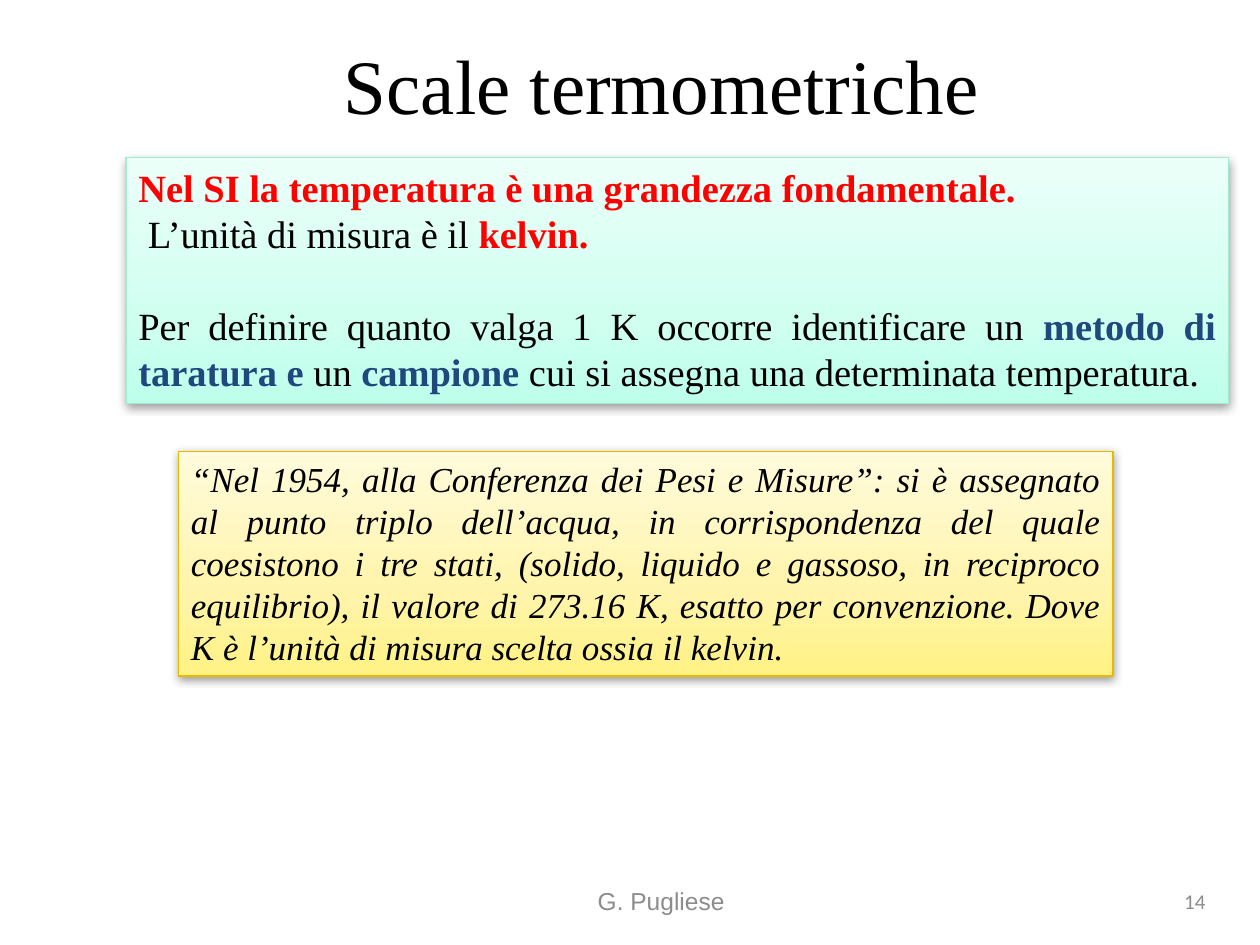
"""Build the slide on temperature scales and the kelvin."""
import copy

import lxml.etree
import pptx
import pptx.dml.color
import pptx.enum.shapes
import pptx.enum.text
import pptx.oxml.ns
import pptx.util
from pptx.util import Cm

ALIGN = pptx.enum.text.PP_ALIGN
ANCHOR = pptx.enum.text.MSO_ANCHOR
COLORS = {
    "text": "000000", "key": "FF0000", "term": "1F497D", "footer": "8C8C8C",
    "mint_line": "A4EBCD", "gold_line": "E7BA00",
}
GRADIENTS = {
    "mint": ("BDFFEB", "D0FFF0", "EBFFF9"),
    "gold": ("FFF284", "FFF4A9", "FFFBDC"),
}
STOPS = (0, 0.35, 1)


def rgb(value):
    """Return the colour for a hex string."""
    return pptx.dml.color.RGBColor.from_string(value)


class Deck:
    """Hold the style and the current slide."""

    serif = "Times New Roman"

    def __init__(self):
        """Start a presentation with one title-only slide."""
        self.prs = pptx.Presentation()
        self.prs.slide_width, self.prs.slide_height = Cm(25.4), Cm(19.05)
        self.s = self.prs.slides.add_slide(self.prs.slide_layouts[5])

    def style(self, r, size, color="text", font=serif, bold=False, italic=False):
        """Format one run."""
        r.font.size, r.font.name = pptx.util.Pt(size), font
        r.font.bold, r.font.italic = bold, italic
        r.font.color.rgb = rgb(COLORS[color])

    def title(self, text, x, y, w, h):
        """Fill and place the title placeholder."""
        sp = self.s.shapes.title
        sp.left, sp.top, sp.width, sp.height = Cm(x), Cm(y), Cm(w), Cm(h)
        sp.text_frame.text = text
        sp.text_frame.vertical_anchor = ANCHOR.MIDDLE
        p = sp.text_frame.paragraphs[0]
        p.alignment = ALIGN.CENTER
        self.style(p.runs[0], 44)

    def label(self, text, x, w, size, font, align):
        """Add a footer label."""
        sp = self.s.shapes.add_textbox(Cm(x), Cm(17.66), Cm(w), Cm(1.01))
        tf = sp.text_frame
        tf.word_wrap, tf.vertical_anchor = True, ANCHOR.MIDDLE
        tf.text = text
        tf.paragraphs[0].alignment = align
        self.style(tf.paragraphs[0].runs[0], size, "footer", font)

    def shadow(self, sp):
        """Give a shape a soft shadow below it."""
        sp.shadow.inherit = False
        effects = sp._element.spPr.find(pptx.oxml.ns.qn("a:effectLst"))
        outer = lxml.etree.SubElement(
            effects, pptx.oxml.ns.qn("a:outerShdw"), blurRad="63500",
            dist="20320", dir="5400000", rotWithShape="0")
        clr = lxml.etree.SubElement(outer, pptx.oxml.ns.qn("a:srgbClr"), val="000000")
        lxml.etree.SubElement(clr, pptx.oxml.ns.qn("a:alpha"), val="38000")

    def panel(self, look, x, y, w, h, paragraphs, size, italic=False):
        """Add a gradient panel; each paragraph is a list of (text, colour, bold)."""
        sp = self.s.shapes.add_shape(
            pptx.enum.shapes.MSO_SHAPE.RECTANGLE, Cm(x), Cm(y), Cm(w), Cm(h))
        sp.fill.gradient()
        sp.fill.gradient_angle = 90
        first = sp._element.spPr.findall(".//" + pptx.oxml.ns.qn("a:gs"))[0]
        first.addnext(copy.deepcopy(first))
        for stop, position, color in zip(sp.fill.gradient_stops, STOPS, GRADIENTS[look]):
            stop.position, stop.color.rgb = position, rgb(color)
        sp.line.color.rgb = rgb(COLORS[look + "_line"])
        sp.line.width = pptx.util.Pt(0.75)
        self.shadow(sp)
        tf = sp.text_frame
        tf.word_wrap, tf.vertical_anchor = True, ANCHOR.TOP
        for i, runs in enumerate(paragraphs):
            p = tf.add_paragraph() if i else tf.paragraphs[0]
            p.alignment = ALIGN.JUSTIFY
            for text, color, bold in runs:
                r = p.add_run()
                r.text = text
                self.style(r, size, color, bold=bold, italic=italic)
        return tf


def main():
    """Build and save the slide."""
    deck = Deck()
    deck.title("Scale termometriche", 2.12, 0.42, 22.44, 2.54)
    deck.label("G. Pugliese", 9.31, 8.04, 14, "Arial", ALIGN.CENTER)
    deck.label("14", 18.63, 5.92, 12, "Calibri", ALIGN.RIGHT)
    tf = deck.panel("mint", 2.54, 3.18, 22.22, 4.96, [
        [("Nel SI la temperatura è una grandezza fondamentale.", "key", True)],
        [("L’unità di misura è il ", "text", False), ("kelvin.", "key", True)],
        [("Per definire quanto valga 1 K occorre identificare un ", "text", False),
         ("metodo di taratura e ", "term", True), ("un ", "text", False),
         ("campione", "term", True),
         (" cui si assegna una determinata temperatura.", "text", False)],
    ], 22)
    tf.paragraphs[1]._p.get_or_add_pPr().set("indent", str(pptx.util.Pt(5.5)))
    tf.paragraphs[2].space_before = pptx.util.Pt(26)
    deck.panel("gold", 3.6, 9.1, 18.84, 4.53, [[(
        "“Nel 1954, alla Conferenza dei Pesi e Misure”: si è assegnato al punto "
        "triplo dell’acqua, in corrispondenza del quale coesistono i tre stati, "
        "(solido, liquido e gassoso, in reciproco equilibrio), il valore di "
        "273.16 K, esatto per convenzione. Dove K è l’unità di misura scelta "
        "ossia il kelvin.", "text", False)]], 20, italic=True)
    deck.prs.save("out.pptx")


if __name__ == "__main__":
    main()
